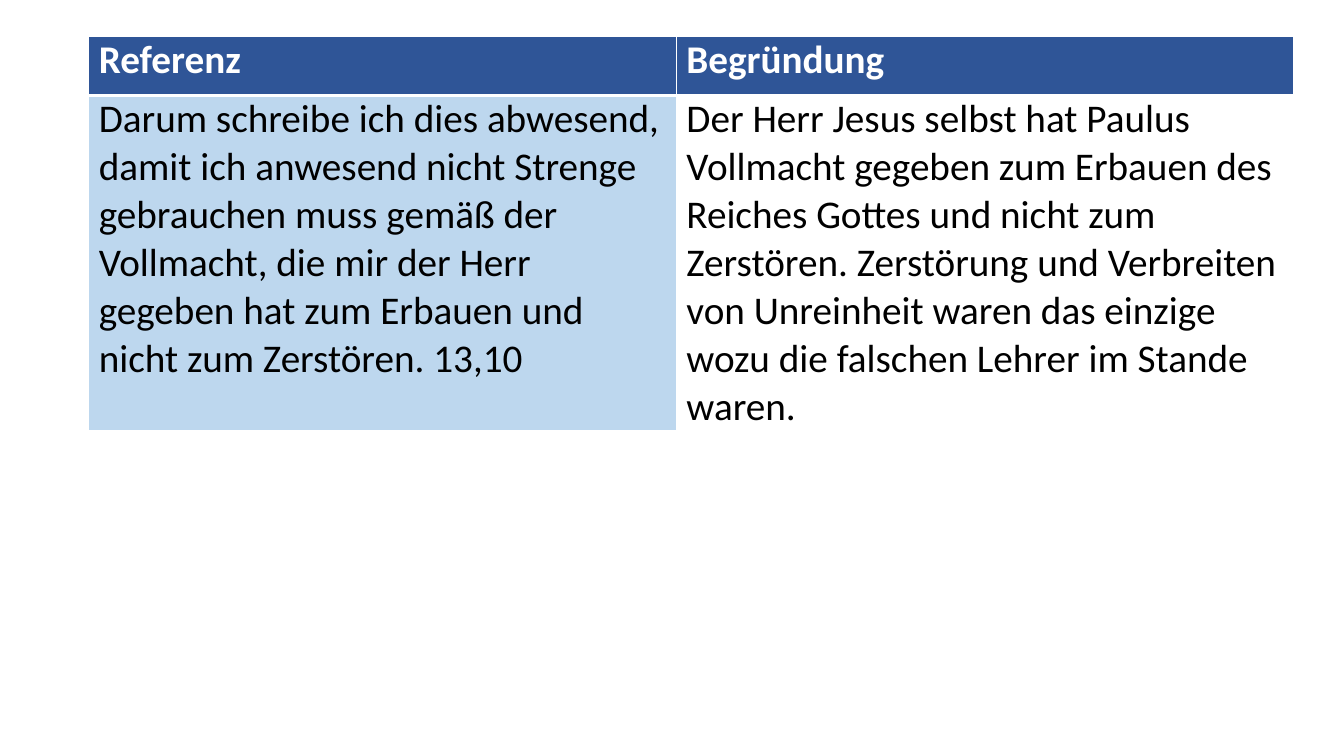
from dataclasses import dataclass

from lxml import etree
from pptx import Presentation
from pptx.dml.color import RGBColor
from pptx.enum.text import MSO_ANCHOR, PP_ALIGN
from pptx.oxml.ns import qn
from pptx.util import Cm, Pt

TOP = MSO_ANCHOR.TOP
LEFT = PP_ALIGN.LEFT


@dataclass(frozen=True)
class Theme:
    font: str = "Calibri"
    size: int = 28
    header: str = "2F5597"
    quote: str = "BDD7EE"
    white: str = "FFFFFF"
    black: str = "000000"
    thin: int = 1
    thick: int = 3


THEME = Theme()
COLUMNS = (14.81, 15.54)
ROWS = (1.5, 5.23)
HEADINGS = ("Referenz", "Begründung")
QUOTE = (
    "Darum schreibe ich dies abwesend, damit ich anwesend nicht Strenge "
    "gebrauchen muss gemäß der Vollmacht, die mir der Herr gegeben hat zum "
    "Erbauen und nicht zum Zerstören. 13,10"
)
REASON = (
    "Der Herr Jesus selbst hat Paulus Vollmacht gegeben zum Erbauen des "
    "Reiches Gottes und nicht zum Zerstören. Zerstörung und Verbreiten von "
    "Unreinheit waren das einzige wozu die falschen Lehrer im Stande waren."
)


def write_text(tf, text, *, color, bold=False):
    tf.word_wrap = True
    p = tf.paragraphs[0]
    p.alignment = LEFT
    r = p.add_run()
    r.text = text
    r.font.name = THEME.font
    r.font.size = Pt(THEME.size)
    r.font.bold = bold
    r.font.color.rgb = RGBColor.from_string(color)


def set_borders(cell, top, bottom):
    tc_pr = cell._tc.get_or_add_tcPr()
    widths = {"lnL": THEME.thin, "lnR": THEME.thin, "lnT": top, "lnB": bottom}
    for tag, width in widths.items():
        ln = etree.SubElement(tc_pr, qn(f"a:{tag}"), w=str(Pt(width)))
        fill = etree.SubElement(ln, qn("a:solidFill"))
        etree.SubElement(fill, qn("a:srgbClr"), val=THEME.white)


def format_cell(cell, text, *, fill, color, bold=False, top=THEME.thin, bottom=THEME.thin):
    cell.margin_left = cell.margin_right = Cm(0.25)
    cell.margin_top = cell.margin_bottom = 0
    cell.vertical_anchor = TOP
    set_borders(cell, top, bottom)
    cell.fill.solid()
    cell.fill.fore_color.rgb = RGBColor.from_string(fill)
    write_text(cell.text_frame, text, color=color, bold=bold)


def add_reference_table(s):
    frame = s.shapes.add_table(
        len(ROWS), len(COLUMNS), Cm(2.24), Cm(0.91), Cm(sum(COLUMNS)), Cm(sum(ROWS))
    )
    table = frame.table
    for column, width in zip(table.columns, COLUMNS):
        column.width = Cm(width)
    for row, height in zip(table.rows, ROWS):
        row.height = Cm(height)
    frame.height = Cm(9.8)

    for i, heading in enumerate(HEADINGS):
        format_cell(table.cell(0, i), heading, fill=THEME.header,
                    color=THEME.white, bold=True, bottom=THEME.thick)
    for i, (text, fill) in enumerate(((QUOTE, THEME.quote), (REASON, THEME.white))):
        format_cell(table.cell(1, i), text, fill=fill,
                    color=THEME.black, top=THEME.thick)


def main():
    prs = Presentation()
    prs.slide_width = Cm(33.87)
    prs.slide_height = Cm(19.05)
    s = prs.slides.add_slide(prs.slide_layouts[6])
    add_reference_table(s)
    prs.save("out.pptx")


if __name__ == "__main__":
    main()
